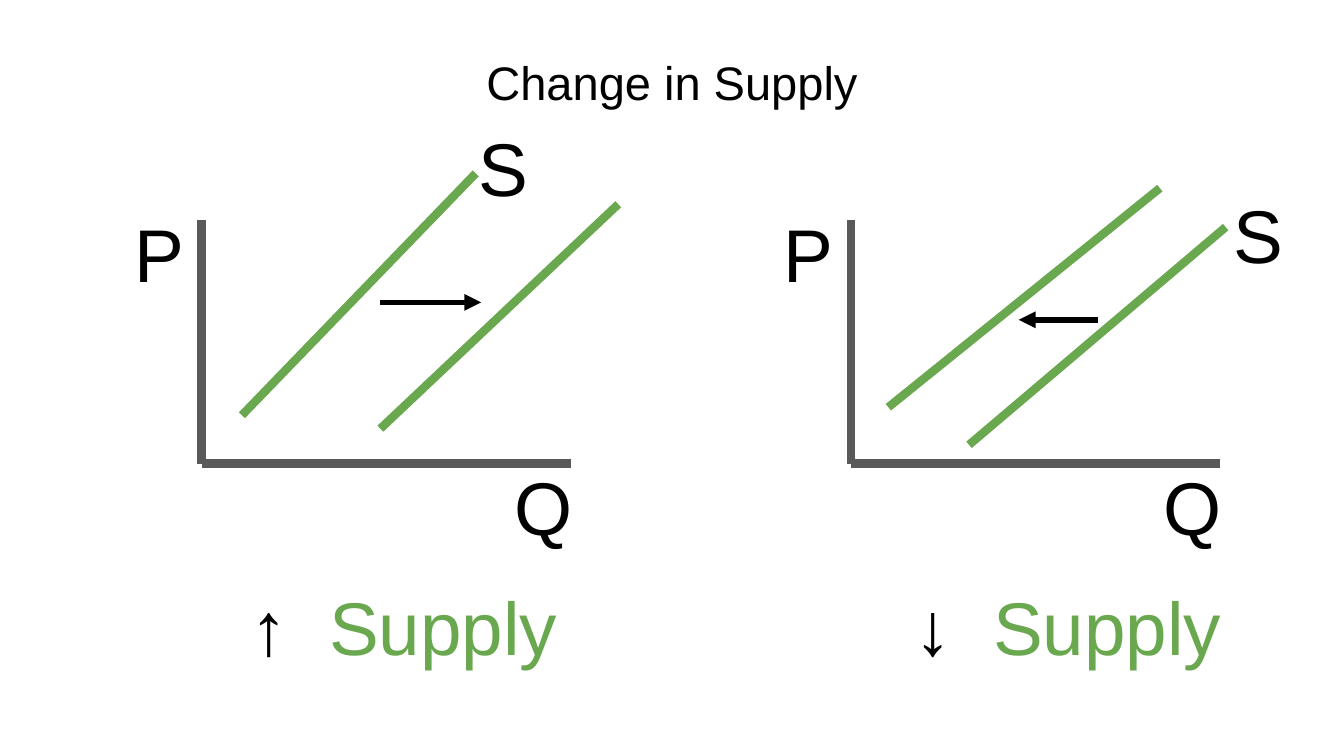
from dataclasses import dataclass

from lxml.etree import SubElement
from pptx import Presentation
from pptx.dml.color import RGBColor
from pptx.enum.shapes import MSO_CONNECTOR
from pptx.enum.text import MSO_ANCHOR, MSO_AUTO_SIZE, PP_ALIGN
from pptx.oxml.ns import qn
from pptx.slide import Slide
from pptx.util import Inches, Pt

Point = tuple[float, float]


@dataclass(frozen=True)
class Theme:
    font: str = "Arial"
    ink: str = "000000"
    axis: str = "595959"
    supply: str = "6AA84F"
    title_size: float = 25.2
    label_size: float = 40
    curve_width: float = 4.5
    arrow_width: float = 3


@dataclass(frozen=True)
class Line:
    start: Point
    end: Point


@dataclass(frozen=True)
class SupplyGraph:
    origin_x: float
    old_curve: Line
    new_curve: Line
    shift: Line
    s_label: Point
    s_width: float
    caption_x: float
    symbol: str


THEME = Theme()
SLIDE_WIDTH = 10
SLIDE_HEIGHT = SLIDE_WIDTH * 9 / 16
ORIGIN_Y, AXIS_HEIGHT, AXIS_LENGTH = 3.45, 1.81, 2.75
LABEL_HEIGHT, CAPTION_TOP, CAPTION_WIDTH = 0.77, 4.27, 2.75

GRAPHS = [
    SupplyGraph(1.5, Line((1.8, 3.09), (3.54, 1.29)), Line((4.6, 1.52), (2.83, 3.19)),
                Line((2.83, 2.25), (3.58, 2.25)), (3.46, 0.86), 0.52, 1.61, "↑"),
    SupplyGraph(6.33, Line((7.21, 3.31), (9.12, 1.69)), Line((6.61, 3.03), (8.63, 1.4)),
                Line((8.17, 2.38), (7.58, 2.38)), (9.08, 1.36), 0.57, 6.55, "↓"),
]


def add_line(s: Slide, line: Line, color: str, width: float, arrow: bool = False) -> None:
    points = [Inches(v) for v in (*line.start, *line.end)]
    sp = s.shapes.add_connector(MSO_CONNECTOR.STRAIGHT, *points)
    sp.line.color.rgb = RGBColor.from_string(color)
    sp.line.width = Pt(width)
    if arrow:
        SubElement(sp.line._get_or_add_ln(), qn("a:tailEnd"), type="triangle")
    SubElement(sp._element.spPr, qn("a:effectLst"))


def add_run(p, text: str, size: float, color: str = THEME.ink) -> None:
    r = p.add_run()
    r.text = text
    for name, value in {"name": THEME.font, "size": Pt(size)}.items():
        setattr(r.font, name, value)
    r.font.color.rgb = RGBColor.from_string(color)


def add_label(s: Slide, at: Point, width: float, *runs: tuple[str, str]) -> None:
    """Add a one-line text box made of (text, color) runs."""
    sp = s.shapes.add_textbox(*map(Inches, (*at, width, LABEL_HEIGHT)))
    tf = sp.text_frame
    tf.word_wrap = True
    tf.auto_size = MSO_AUTO_SIZE.SHAPE_TO_FIT_TEXT
    for text, color in runs:
        add_run(tf.paragraphs[0], text, THEME.label_size, color)


def add_title(s: Slide, text: str) -> None:
    sp = s.shapes.title
    place = {"left": 0.34, "top": 0.37, "width": 9.32, "height": 0.47}
    for name, value in place.items():
        setattr(sp, name, Inches(value))
    tf = sp.text_frame
    frame = {"vertical_anchor": MSO_ANCHOR.MIDDLE, "auto_size": MSO_AUTO_SIZE.NONE,
             "word_wrap": True}
    for name, value in frame.items():
        setattr(tf, name, value)
    p = tf.paragraphs[0]
    p.alignment = PP_ALIGN.CENTER
    add_run(p, text, THEME.title_size)


def add_graph(s: Slide, graph: SupplyGraph) -> None:
    x = graph.origin_x
    origin = (x, ORIGIN_Y)
    for axis in (Line((x, ORIGIN_Y - AXIS_HEIGHT), origin),
                 Line(origin, (x + AXIS_LENGTH, ORIGIN_Y))):
        add_line(s, axis, THEME.axis, THEME.curve_width)
    for curve in (graph.old_curve, graph.new_curve):
        add_line(s, curve, THEME.supply, THEME.curve_width)
    add_line(s, graph.shift, THEME.ink, THEME.arrow_width, arrow=True)

    for text, at, width in (("P", (x - 0.6, 1.5), 0.57),
                            ("Q", (x + 2.23, 3.38), 0.63),
                            ("S", graph.s_label, graph.s_width)):
        add_label(s, at, width, (text, THEME.ink))
    add_label(s, (graph.caption_x, CAPTION_TOP), CAPTION_WIDTH,
              (f" {graph.symbol}  ", THEME.ink), ("Supply", THEME.supply))


def main() -> None:
    prs = Presentation()
    prs.slide_width, prs.slide_height = Inches(SLIDE_WIDTH), Inches(SLIDE_HEIGHT)
    s = prs.slides.add_slide(prs.slide_layouts.get_by_name("Title Only"))
    add_title(s, "Change in Supply")
    for graph in GRAPHS:
        add_graph(s, graph)
    prs.save("out.pptx")


if __name__ == "__main__":
    main()
